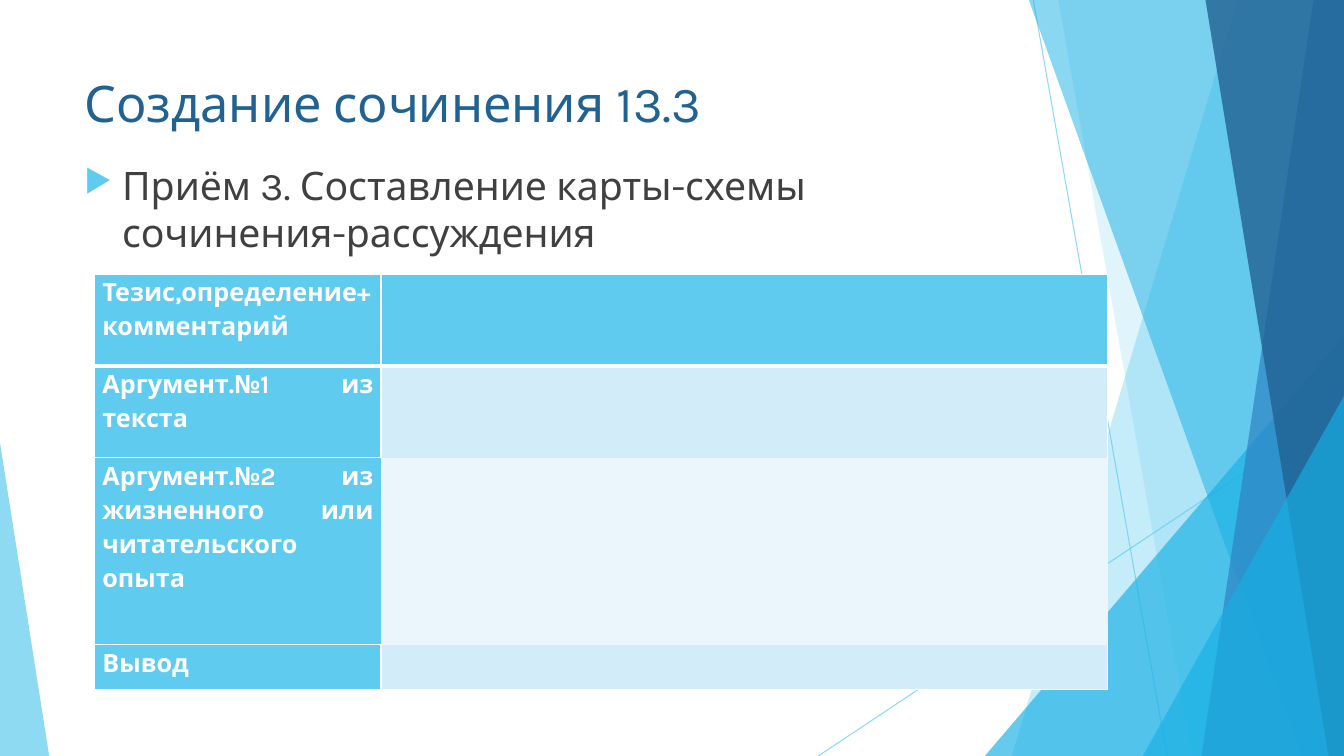
"""Build the essay-plan slide with its faceted backdrop and outline table."""
from lxml import etree
from pptx import Presentation
from pptx.dml.color import RGBColor
from pptx.enum.shapes import MSO_CONNECTOR, MSO_SHAPE
from pptx.enum.text import PP_ALIGN
from pptx.oxml.ns import qn
from pptx.util import Cm, Pt

STRAIGHT = MSO_CONNECTOR.STRAIGHT
TRIANGLE = MSO_SHAPE.ISOSCELES_TRIANGLE
LEFT, JUSTIFY = PP_ALIGN.LEFT, PP_ALIGN.JUSTIFY


class Theme:
    font = "Karla"
    sky, azure, blue, navy = "5FCBEF", "17B0E4", "2E83C3", "226292"
    text, white = "404040", "FFFFFF"
    band, pale = "D2ECF9", "EAF6FC"
    title_size, body_size, cell_size = 36, 28, 18


def paint(fill, color, opacity):
    """Give a fill a solid colour with the opacity in percent."""
    fill.solid()
    fill.fore_color.rgb = RGBColor.from_string(color)
    clr = fill._xPr.find(qn("a:solidFill"))[0]
    etree.SubElement(clr, qn("a:alpha"), val=str(opacity * 1000))


def write(tf, text, size, color, bold=False, align=LEFT, spacing=None, after=None):
    """Put formatted text in a frame and return its paragraph."""
    tf.word_wrap = True
    p = tf.paragraphs[0]
    p.alignment = align
    if spacing:
        p.line_spacing = spacing
    if after:
        p.space_after = Pt(after)
    r = p.add_run()
    r.text = text
    r.font.name, r.font.size, r.font.bold = Theme.font, Pt(size), bold
    r.font.color.rgb = RGBColor.from_string(color)
    return p


W, H = 33.87, 19.05
prs = Presentation()
prs.slide_width, prs.slide_height = Cm(W), Cm(H)
blank = next(layout for layout in prs.slide_layouts if layout.name == "Blank")
s = prs.slides.add_slide(blank)

for x1, y1, x2 in [(26.04, 0, 29.41), (W, 10.24, 20.62)]:
    line = s.shapes.add_connector(STRAIGHT, Cm(x1), Cm(y1), Cm(x2), Cm(H))
    line.line.width = Pt(0.75)
    paint(line.line.fill, Theme.sky, 70)
    etree.SubElement(line._element.spPr, qn("a:effectLst"))

FACETS = [
    ("band", 31.19, 25.5, Theme.sky, 36),
    ("band", 26.67, 30.05, Theme.sky, 20),
    ("corner", 24.82, 8.46, Theme.azure, 66),
    ("band", 25.93, 32.79, Theme.azure, 50),
    ("band", 33.1, 30.28, Theme.blue, 70),
    ("band", 30.38, 33.48, Theme.navy, 80),
    ("corner", 28.8, 9.98, Theme.azure, 66),
    ("left corner", 0, 11.15, Theme.sky, 70),
]
for kind, a, b, color, opacity in FACETS:
    if kind == "band":
        outline = s.shapes.build_freeform(Cm(a), 0)
        outline.add_line_segments([(Cm(W), 0), (Cm(W), Cm(H)), (Cm(b), Cm(H))])
        sp = outline.convert_to_shape()
    else:
        width = W - a if kind == "corner" else 1.24
        sp = s.shapes.add_shape(TRIANGLE, Cm(a), Cm(b), Cm(width), Cm(H - b))
        sp.adjustments[0] = 1 if kind == "corner" else 0
    sp.shadow.inherit = False
    sp.line.fill.background()
    paint(sp.fill, color, opacity)

title = s.shapes.add_textbox(Cm(1.88), Cm(1.7), Cm(23.88), Cm(2.2))
write(title.text_frame, "Создание сочинения 13.3", Theme.title_size, Theme.navy)

body = s.shapes.add_textbox(Cm(1.88), Cm(3.94), Cm(23.88), Cm(2.8))
p = write(body.text_frame, "Приём 3. Составление карты-схемы сочинения-рассуждения",
          Theme.body_size, Theme.text)
pPr = p._p.get_or_add_pPr()
pPr.set("marL", str(Cm(0.95)))
pPr.set("indent", str(-Cm(0.95)))
etree.SubElement(etree.SubElement(pPr, qn("a:buClr")), qn("a:srgbClr"), val=Theme.sky)
etree.SubElement(pPr, qn("a:buSzPct"), val="80000")
etree.SubElement(pPr, qn("a:buChar"), char="▶")

ROWS = [
    ("Тезис,определение+комментарий", 2.31, Theme.sky, "LRTB", "LRTB"),
    ("Аргумент.№1 из текста", 2.31, Theme.band, "LRTB", "LRT"),
    ("Аргумент.№2 из жизненного или читательского опыта", 4.72, Theme.pale, "LTB", ""),
    ("Вывод", 1.12, Theme.band, "LRTB", "LRB"),
]
COLS = [7.21, 18.31]
table = s.shapes.add_table(len(ROWS), len(COLS), Cm(2.39), Cm(6.91), Cm(sum(COLS)),
                           Cm(sum(row[1] for row in ROWS))).table
for col, width in zip(table.columns, COLS):
    col.width = Cm(width)
for i, (label, height, color, *borders) in enumerate(ROWS):
    table.rows[i].height = Cm(height)
    for j, sides in enumerate(borders):
        cell = table.cell(i, j)
        tcPr = cell._tc.get_or_add_tcPr()
        for side in "LRTB":
            points = 3 if (i, side) in [(0, "B"), (1, "T")] else 1
            ln = etree.SubElement(tcPr, qn(f"a:ln{side}"), w=str(Pt(points)))
            if side in sides:
                fill = etree.SubElement(ln, qn("a:solidFill"))
                etree.SubElement(fill, qn("a:srgbClr"), val=Theme.white)
            else:
                etree.SubElement(ln, qn("a:noFill"))
        cell.fill.solid()
        cell.fill.fore_color.rgb = RGBColor.from_string(color if j else Theme.sky)
    head = table.cell(i, 0)
    head.margin_left = head.margin_right = Cm(0.19)
    head.margin_top = head.margin_bottom = 0
    write(head.text_frame, label, Theme.cell_size, Theme.white, bold=True,
          align=JUSTIFY, spacing=1.15, after=10)

prs.save("out.pptx")
